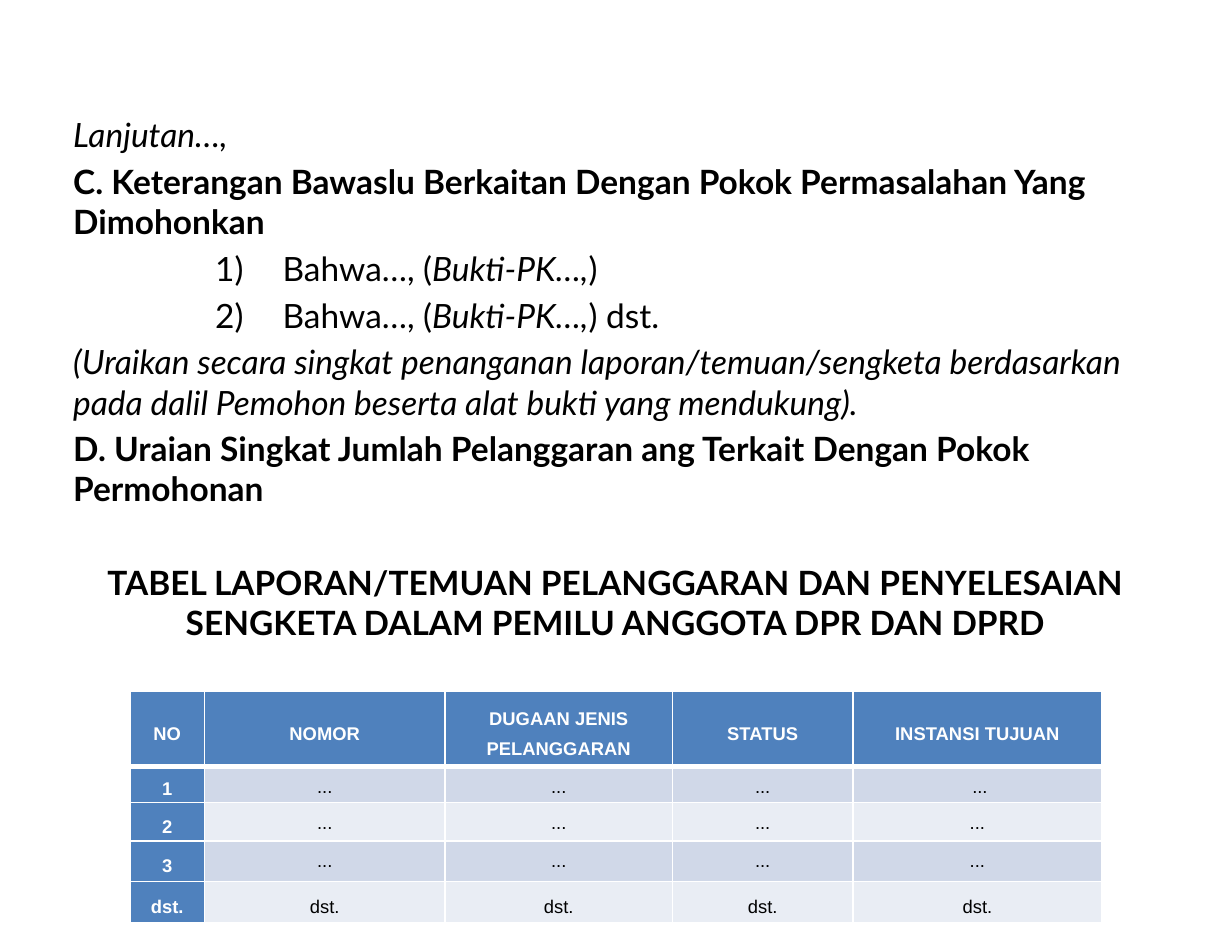
import lxml.etree
import pptx
import pptx.dml.color
import pptx.enum.text
import pptx.oxml.ns
import pptx.util

PLAIN, BOLD, ITALIC = {}, {"bold": True}, {"italic": True}

OUTLINE = [
    ("first", [("Lanjutan…,", ITALIC)]),
    ("text", [("C. Keterangan Bawaslu Berkaitan Dengan Pokok Permasalahan Yang Dimohonkan", BOLD)]),
    ("numbered", [("Bahwa…, (", PLAIN), ("Bukti-PK…,", ITALIC), (")", PLAIN)]),
    ("numbered", [("Bahwa…, (", PLAIN), ("Bukti-PK…,", ITALIC), (") dst.", PLAIN)]),
    ("text", [("(Uraikan secara singkat penanganan laporan/temuan/sengketa berdasarkan pada dalil Pemohon beserta alat bukti yang mendukung).", ITALIC)]),
    ("text", [("D. Uraian Singkat Jumlah Pelanggaran ang Terkait Dengan Pokok Permohonan", BOLD)]),
    ("caption", [("TABEL LAPORAN/TEMUAN PELANGGARAN DAN PENYELESAIAN SENGKETA DALAM PEMILU ANGGOTA DPR DAN DPRD", BOLD)]),
]
VIOLATIONS = [
    ("NO", "NOMOR", "DUGAAN JENIS PELANGGARAN", "STATUS", "INSTANSI TUJUAN"),
    ("1", "...", "...", "...", " ..."),
    ("2", "...", "...", "...", "..."),
    ("3", "...", "...", "...", "..."),
    ("dst.", "dst.", "dst.", "dst.", "dst."),
]
COLUMN_WIDTHS = [44.64, 144, 136.08, 108, 149.04]
ROW_HEIGHTS = [44.64, 21.6, 23.04, 24.48, 24.48]

SLIDE_SIZE = (737.28, 567.36)
OUTLINE_AREA = (36.72, 64.8, 663.12, 420.48)
TABLE_CORNER = (77.76, 414)
NUMBER_INDENT = (125.28, -40.32)
RULE, HEADER_RULE = 1, 3

THEME = {
    "outline": {"name": "Lato", "size": pptx.util.Pt(20), "bold": False, "italic": False},
    "table": {"name": "Arial", "size": pptx.util.Pt(11)},
    "ink": "000000",
    "paper": "FFFFFF",
    "accent": "4F81BD",
    "bands": ("E9EDF4", "D0D8E8"),
}
CENTER = pptx.enum.text.PP_ALIGN.CENTER
MIDDLE = pptx.enum.text.MSO_ANCHOR.MIDDLE
TOP = pptx.enum.text.MSO_ANCHOR.TOP
PARAGRAPHS = {
    "first": {},
    "text": {"space_before": pptx.util.Pt(4)},
    "numbered": {"space_before": pptx.util.Pt(4)},
    "caption": {"space_before": pptx.util.Pt(32), "alignment": CENTER},
}
CELL_MARGINS = {
    "margin_left": pptx.util.Pt(5),
    "margin_right": pptx.util.Pt(5),
    "margin_top": 0,
    "margin_bottom": 0,
}


def apply(target, values):
    for attribute, value in values.items():
        setattr(target, attribute, value)


def points(lengths):
    return [pptx.util.Pt(length) for length in lengths]


def rgb(color):
    return pptx.dml.color.RGBColor.from_string(color)


def child(parent, tag, **attributes):
    return lxml.etree.SubElement(parent, pptx.oxml.ns.qn(tag), attributes)


def write(paragraph, words, font, color):
    run = paragraph.add_run()
    run.text = words
    apply(run.font, font)
    run.font.color.rgb = rgb(color)


def number(paragraph):
    margin, indent = points(NUMBER_INDENT)
    properties = paragraph._p.get_or_add_pPr()
    properties.set("marL", str(margin))
    properties.set("indent", str(indent))
    child(properties, "a:buAutoNum", type="arabicParenR")


def add_outline(slide):
    frame = slide.shapes.add_textbox(*points(OUTLINE_AREA)).text_frame
    frame.word_wrap = True
    for index, (role, phrases) in enumerate(OUTLINE):
        paragraph = frame.add_paragraph() if index else frame.paragraphs[0]
        apply(paragraph, PARAGRAPHS[role])
        if role == "numbered":
            number(paragraph)
        for words, emphasis in phrases:
            write(paragraph, words, THEME["outline"] | emphasis, THEME["ink"])


def rule_cell(cell, row):
    widths = {
        "a:lnL": RULE,
        "a:lnR": RULE,
        "a:lnT": HEADER_RULE if row == 1 else RULE,
        "a:lnB": HEADER_RULE if row == 0 else RULE,
    }
    properties = cell._tc.get_or_add_tcPr()
    for side, width in widths.items():
        line = child(properties, side, w=str(pptx.util.Pt(width)))
        child(child(line, "a:solidFill"), "a:srgbClr", val=THEME["paper"])


def add_violations(slide):
    area = points((*TABLE_CORNER, sum(COLUMN_WIDTHS), sum(ROW_HEIGHTS)))
    table = slide.shapes.add_table(len(VIOLATIONS), len(COLUMN_WIDTHS), *area).table
    apply(table, {"first_row": False, "horz_banding": False})
    for column, width in zip(table.columns, points(COLUMN_WIDTHS)):
        column.width = width
    for row, height in zip(table.rows, points(ROW_HEIGHTS)):
        row.height = height
    last = len(VIOLATIONS) - 1
    for row, entries in enumerate(VIOLATIONS):
        for column, words in enumerate(entries):
            heading = row == 0 or column == 0
            cell = table.cell(row, column)
            rule_cell(cell, row)
            apply(cell, CELL_MARGINS)
            cell.vertical_anchor = MIDDLE if heading or row == last else TOP
            cell.fill.solid()
            cell.fill.fore_color.rgb = rgb(THEME["accent"] if heading else THEME["bands"][row % 2])
            paragraph = cell.text_frame.paragraphs[0]
            apply(paragraph, {"alignment": CENTER, "line_spacing": 1.5})
            color = THEME["paper"] if heading else THEME["ink"]
            write(paragraph, words, THEME["table"] | {"bold": heading}, color)


def main():
    deck = pptx.Presentation()
    deck.slide_width, deck.slide_height = points(SLIDE_SIZE)
    slide = deck.slides.add_slide(deck.slide_layouts[6])
    add_outline(slide)
    add_violations(slide)
    deck.save("out.pptx")


if __name__ == "__main__":
    main()
